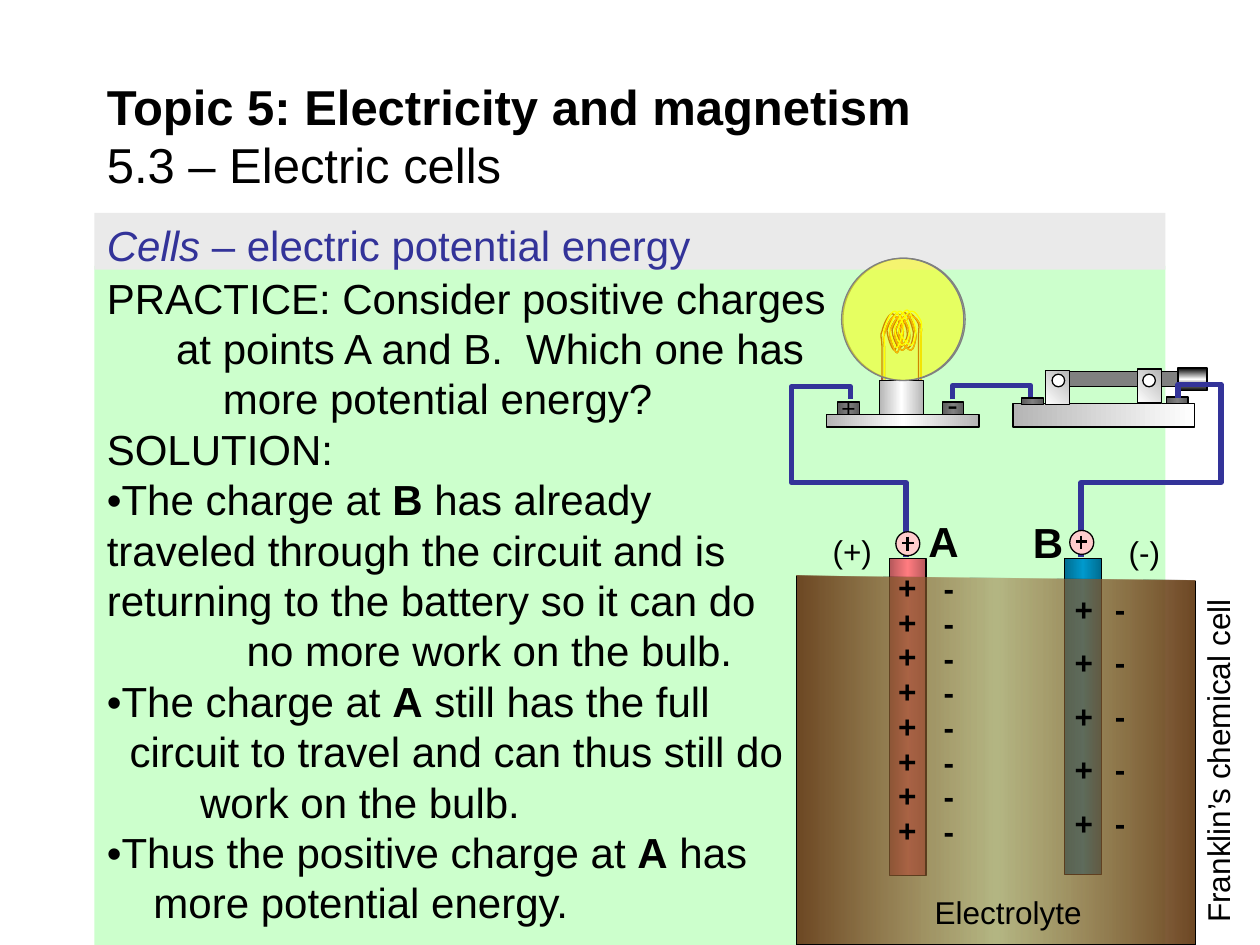
from dataclasses import dataclass
from typing import NamedTuple

from lxml import etree
from pptx import Presentation
from pptx.dml.color import RGBColor
from pptx.enum.shapes import MSO_CONNECTOR, MSO_SHAPE
from pptx.enum.text import MSO_ANCHOR, PP_ALIGN
from pptx.oxml.ns import qn
from pptx.util import Pt

PX = 9144
RECT, OVAL = MSO_SHAPE.RECTANGLE, MSO_SHAPE.OVAL
STRAIGHT = MSO_CONNECTOR.STRAIGHT
LEFT, CENTER = PP_ALIGN.LEFT, PP_ALIGN.CENTER
TOP, MIDDLE = MSO_ANCHOR.TOP, MSO_ANCHOR.MIDDLE
FONT, BLACK, WHITE, NAVY = "Arial", "000000", "FFFFFF", "333399"


class Stop(NamedTuple):
    position: int
    color: str
    alpha: int = 100
    shade: int = 100


class Gradient(NamedTuple):
    stops: tuple[Stop, ...]
    angle: int = 0


@dataclass
class Block:
    left: int
    top: int
    width: int
    height: int
    fill: str | Gradient | None = None
    line: str | None = BLACK
    kind: MSO_SHAPE = RECT
    alpha: int = 100


@dataclass
class Label:
    text: str
    left: int
    top: int
    width: int
    height: int
    size: int = 18
    bold: bool = False
    wrap: bool = False
    rotation: int = 0
    align: PP_ALIGN = LEFT
    spacing: float = 1.0
    before: float = 0


class Line(NamedTuple):
    text: str
    tabs: tuple[int, ...] = ()


def band(color: str, alpha: int = 100) -> Gradient:
    return Gradient((Stop(0, color, shade=46), Stop(50, color, alpha), Stop(100, color, shade=46)))


STEEL, DARK = band(WHITE), band("808080")
KNOB = Gradient((Stop(0, BLACK), Stop(50, WHITE), Stop(100, BLACK)), 90)
POST = Gradient((Stop(0, WHITE), Stop(100, WHITE, shade=46)), 315)
BASE = Gradient((Stop(0, WHITE, shade=46), Stop(100, WHITE)))
BODY = [
    Line("PRACTICE: Consider positive charges\v\tat points A and B.  Which one has"
         "\v\t\tmore potential energy?", (55, 92)),
    Line("SOLUTION:"),
    Line("•The charge at *B* has already\vtraveled through the circuit and is"
         "\vreturning to the battery so it can do\v\tno more work on the bulb.", (111,)),
    Line("•The charge at *A* still has the full\v\tcircuit to travel and can thus still do"
         "\v\t\twork on the bulb.", (18, 74)),
    Line("•Thus the positive charge at *A* has\v\tmore potential energy.", (37,)),
]
FILAMENT = [
    (702, 327), (702, 308), (702, 288), (702, 278), (702, 268), (700, 269), (702, 265),
    (703, 260), (707, 251), (710, 251), (712, 251), (717, 259), (717, 263),
    (717, 268), (713, 280), (712, 280), (710, 280), (706, 269), (706, 264),
    (707, 259), (712, 251), (714, 251), (717, 251), (722, 261), (722, 266),
    (723, 270), (718, 278), (716, 278), (714, 278), (710, 269), (710, 264),
    (711, 260), (717, 250), (720, 250), (723, 251), (726, 261), (727, 266),
    (727, 270), (725, 278), (723, 278), (720, 278), (713, 269), (713, 264),
    (714, 260), (720, 252), (723, 251), (726, 250), (729, 255), (731, 259),
    (732, 262), (731, 259), (731, 271), (731, 283), (731, 306), (731, 329),
]
COILS = [(BLACK, 0, 0), ("990000", -2, -2), ("FF6600", 0, 0), ("FFFF00", 0, -4)]
WIRES = [
    [(719, 442), (719, 383), (628, 383), (628, 307), (675, 307), (675, 317)],
    [(756, 317), (756, 306), (818, 306), (818, 315)],
    [(935, 316), (935, 305), (969, 305), (969, 383), (858, 383), (858, 442)],
]
BACK_PARTS = [
    Block(833, 295, 124, 12, "808080"),
    Block(935, 292, 23, 18, KNOB),
    Block(669, 205, 97, 97, None, "808080", OVAL),
    Block(706, 443, 29, 252, band("FF7C80")),
    Block(845, 443, 29, 251, band("0099CC")),
]
LAMP_PARTS = [Block(656, 329, 121, 10, STEEL), Block(698, 302, 35, 27, STEEL)]
LAMP_PARTS += [Block(left, 319, 17, 10, DARK) for left in (665, 748)]
SWITCH_PARTS = [
    Block(804, 320, 144, 19, BASE),
    Block(830, 294, 19, 27, POST),
    Block(811, 316, 17, 5, DARK),
    Block(926, 315, 17, 5, DARK),
    Block(903, 293, 19, 27, POST),
]
SWITCH_PARTS += [Block(left, 297, 10, 10, WHITE, kind=OVAL) for left in (835, 907)]
CELL_LABELS = [
    Label("\n".join("-" * 5), 875, 463, 31, 221, bold=True, wrap=True, before=9),
    Label("\n".join("-" * 8), 739, 460, 31, 237, bold=True, wrap=True, spacing=0.5, before=9),
    Label("\n".join("+" * 8), 703, 459, 31, 237, bold=True, wrap=True, spacing=0.5, before=9),
    Label("\n".join("+" * 5), 843, 463, 31, 221, bold=True, wrap=True, before=9),
    Label("Electrolyte", 732, 704, 137, 40),
    Label("Franklin’s chemical cell", 820, 584, 293, 40, wrap=True, rotation=270, align=CENTER),
]
LAMP_LABELS = [Label("-", 742, 301, 28, 40), Label("+", 658, 307, 31, 33, size=14)]
POINT_LABELS = [
    Label("A", 727, 404, 37, 43, size=24, bold=True),
    Label("B", 810, 405, 37, 43, size=24, bold=True),
    Label("(+)", 651, 417, 52, 40),
    Label("(-)", 886, 418, 45, 40),
]


def rgb(color: str) -> RGBColor:
    return RGBColor.from_string(color)


def adjust(color_node, alpha: int, shade: int = 100) -> None:
    for name, value in (("a:shade", shade), ("a:alpha", alpha)):
        if value < 100:
            etree.SubElement(color_node, qn(name), val=str(value * 1000))


def paint(shape, fill: str | Gradient | None, line: str | None, width: float = 0.75) -> None:
    shape.shadow.inherit = False
    if fill is None:
        shape.fill.background()
    elif isinstance(fill, str):
        shape.fill.solid()
        shape.fill.fore_color.rgb = rgb(fill)
    else:
        shape.fill.gradient()
        shape.fill.gradient_angle = -fill.angle % 360
        stop_list = shape._element.spPr.find(".//" + qn("a:gsLst"))
        for old_stop in list(stop_list):
            stop_list.remove(old_stop)
        for stop in fill.stops:
            node = etree.SubElement(stop_list, qn("a:gs"), pos=str(stop.position * 1000))
            color_node = etree.SubElement(node, qn("a:srgbClr"), val=stop.color)
            adjust(color_node, stop.alpha, stop.shade)
    if line is None:
        shape.line.fill.background()
    else:
        shape.line.color.rgb = rgb(line)
        shape.line.width = Pt(width)


def add_block(page, block: Block):
    shape = page.shapes.add_shape(block.kind, block.left * PX, block.top * PX,
                                  block.width * PX, block.height * PX)
    paint(shape, block.fill, block.line)
    if block.alpha < 100:
        adjust(shape._element.spPr.find(qn("a:solidFill"))[0], block.alpha)
    return shape


def add_outline(page, points, fill, line: str, width: float = 0.75):
    builder = page.shapes.build_freeform(*points[0], scale=PX)
    builder.add_line_segments(points[1:], close=False)
    shape = builder.convert_to_shape()
    paint(shape, fill, line, width)
    return shape


def bend(shape) -> None:
    """Turn each three straight segments into one cubic curve."""
    outline = shape._element.spPr.find(".//" + qn("a:path"))
    segments = outline.findall(qn("a:lnTo"))
    for first in range(0, len(segments), 3):
        cubic = etree.SubElement(outline, qn("a:cubicBezTo"))
        for segment in segments[first:first + 3]:
            cubic.append(segment[0])
            outline.remove(segment)


def style(span, size: int, color: str = BLACK, bold: bool = False, italic: bool = False) -> None:
    span.font.name, span.font.size = FONT, Pt(size)
    span.font.bold, span.font.italic = bold, italic
    span.font.color.rgb = rgb(color)


def write_rich(box, lines: list[Line], size: int, color: str = BLACK,
               italic: bool = False, anchor: MSO_ANCHOR = TOP) -> None:
    frame = box.text_frame
    frame.word_wrap, frame.vertical_anchor = True, anchor
    for index, line in enumerate(lines):
        para = frame.add_paragraph() if index else frame.paragraphs[0]
        para.alignment = LEFT
        if line.tabs:
            tab_list = etree.SubElement(para._p.get_or_add_pPr(), qn("a:tabLst"))
            for tab in line.tabs:
                etree.SubElement(tab_list, qn("a:tab"), pos=str(tab * PX), algn="l")
        for row, text in enumerate(line.text.split("\v")):
            if row:
                para.add_line_break()
            for order, part in enumerate(text.split("*")):
                if part:
                    span, marked = para.add_run(), order % 2 == 1
                    span.text = part
                    style(span, size, color, marked and not italic, marked and italic)


def add_label(page, label: Label) -> None:
    box = page.shapes.add_textbox(label.left * PX, label.top * PX,
                                  label.width * PX, label.height * PX)
    box.rotation = label.rotation
    box.text_frame.word_wrap = label.wrap
    box.text_frame.text = label.text
    for para in box.text_frame.paragraphs:
        para.alignment, para.line_spacing = label.align, label.spacing
        para.space_before = Pt(label.before)
        style(para.runs[0], label.size, bold=label.bold)


def add_charge(page, left: int, top: int) -> None:
    add_block(page, Block(left, top, 19, 19, "FFCCCC", kind=OVAL))
    x, y = left + 9, top + 9
    for ends in ((x - 4, y, x + 5, y), (x, y - 5, x, y + 6)):
        stroke = page.shapes.add_connector(STRAIGHT, *(end * PX for end in ends))
        stroke.line.color.rgb, stroke.line.width = rgb(BLACK), Pt(1.5)
        etree.SubElement(stroke._element.spPr, qn("a:effectLst"))


def main() -> None:
    deck = Presentation()
    deck.slide_width, deck.slide_height = 1000 * PX, 750 * PX
    page = deck.slides.add_slide(deck.slide_layouts[6])
    write_rich(add_block(page, Block(75, 211, 850, 539, "CCFFCC", None)), BODY, 24)
    write_rich(add_block(page, Block(75, 169, 850, 45, "EAEAEA", None)),
               [Line("*Cells* – electric potential energy")], 24, NAVY, italic=True)
    for color, dx, dy in COILS:
        bend(add_outline(page, [(x + dx, y + dy) for x, y in FILAMENT], None, color))
    for block in BACK_PARTS:
        add_block(page, block)
    add_outline(page, [(632, 457), (632, 750), (949, 750), (949, 461)], band("996633", 47), BLACK)
    for label in CELL_LABELS:
        add_label(page, label)
    for block in LAMP_PARTS:
        add_block(page, block)
    for label in LAMP_LABELS:
        add_label(page, label)
    for block in SWITCH_PARTS:
        add_block(page, block)
    for wire in WIRES:
        add_outline(page, wire, None, NAVY, 3)
    add_block(page, Block(668, 205, 97, 97, "FFFF00", "808080", OVAL, 52))
    for left, top in ((711, 422), (849, 421)):
        add_charge(page, left, top)
    title = page.shapes.add_textbox(75 * PX, 58 * PX, 850 * PX, 98 * PX)
    write_rich(title, [Line("*Topic 5: Electricity and magnetism*\v5.3 – Electric cells")], 28,
               anchor=MIDDLE)
    for label in POINT_LABELS:
        add_label(page, label)
    deck.save("out.pptx")


if __name__ == "__main__":
    main()
